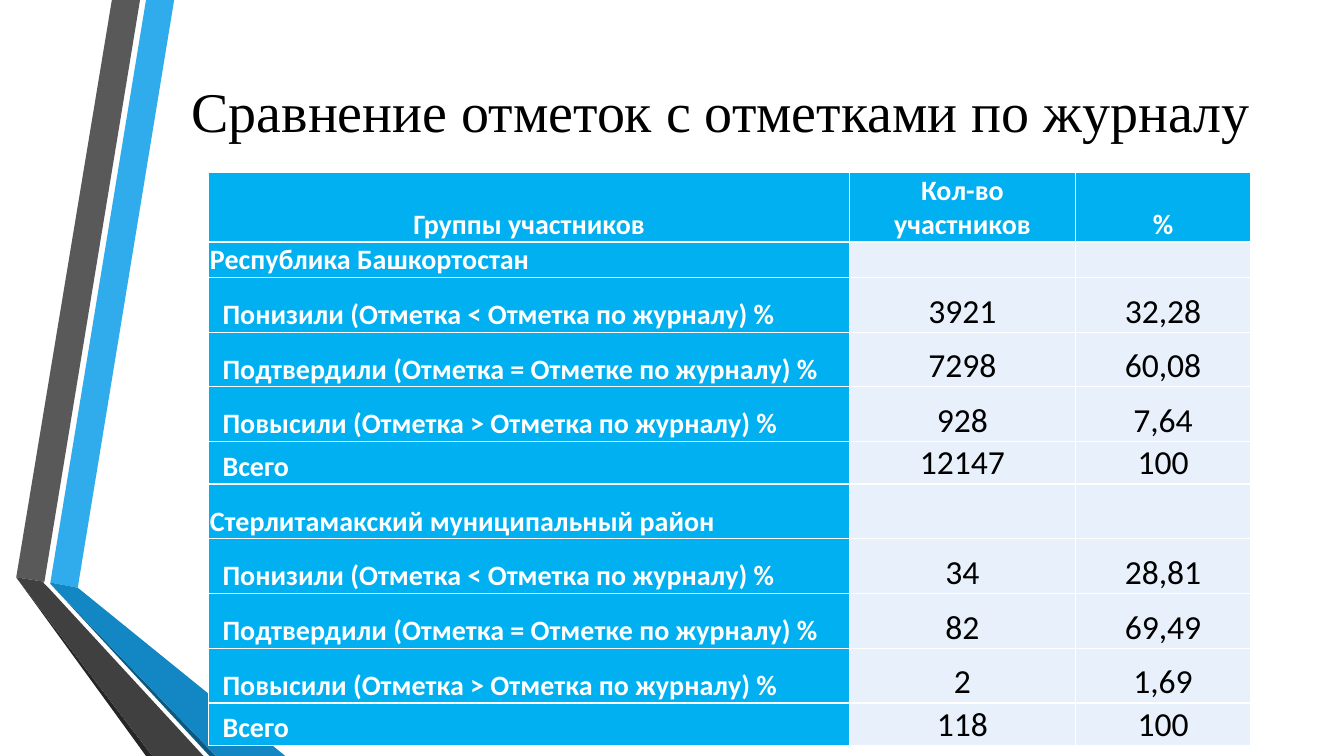
from collections import namedtuple
from dataclasses import dataclass

from lxml import etree
from pptx import Presentation
from pptx import util as u
from pptx.dml import color
from pptx.enum import text
from pptx.oxml import ns

Box = namedtuple("Box", "left top width height")


@dataclass(frozen=True)
class Theme:
    title_font: str = "Times New Roman"
    table_font: str = "Calibri"
    title_size: int = 40
    label_size: int = 20
    value_size: int = 24
    dark: str = "000000"
    light: str = "FFFFFF"
    label_fill: str = "00B0F0"
    value_fill: str = "E8F1FB"
    border_width: int = 1


THEME = Theme()

# Ribbon outlines in cm, from back to front
RIBBONS = [
    ("30ACEC", [(1.27, 14.68), (1.96, 14.81), (4.39, 0), (3.68, 0)]),
    ("595959", [(3.53, 0), (2.82, 0), (0.41, 14.55), (1.12, 14.66)]),
    ("262626", [(0.41, 14.55), (3.68, 19.05), (3.84, 19.05)]),
    ("0C5A82", [(1.27, 14.71), (5.28, 19.05), (5.44, 19.05)]),
    ("1287C3", [(1.27, 14.71), (5.44, 19.05), (7.19, 19.05), (1.96, 14.81), (1.27, 14.68)]),
    ("404040", [(5.13, 19.05), (1.22, 14.81), (1.09, 14.68), (1.12, 14.66),
                (0.41, 14.55), (3.84, 19.05)]),
]

TITLE = "Сравнение отметок с отметками по журналу"
HEADINGS = ["Группы участников", "Кол-во участников", "%"]
OUTCOMES = [
    "Понизили (Отметка < Отметка по журналу) %",
    "Подтвердили (Отметка = Отметке по журналу) %",
    "Повысили (Отметка > Отметка по журналу) %",
    "Всего",
]
REGIONS = {
    "Республика Башкортостан":
        [("3921", "32,28"), ("7298", "60,08"), ("928", "7,64"), ("12147", "100")],
    "Стерлитамакский муниципальный район":
        [("34", "28,81"), ("82", "69,49"), ("2", "1,69"), ("118", "100")],
}

COLUMN_WIDTHS = [16.15, 5.69, 4.42]
OUTCOME_HEIGHTS = [1.38, 1.38, 1.38, 1.07]
ROW_HEIGHTS = [1.76, 0.89, *OUTCOME_HEIGHTS, 1.38, *OUTCOME_HEIGHTS]
CELL_MARGIN = 0.03
OUTCOME_INDENT = 0.35


def rgb(code):
    return color.RGBColor.from_string(code)


def apply_format(target, values):
    for name, value in values.items():
        setattr(target, name, value)


def write(paragraph, wording, ink, align, font):
    paragraph.alignment = align
    run = paragraph.add_run()
    run.text = wording
    apply_format(run.font, font)
    run.font.color.rgb = rgb(ink)


def add_ribbons(slide, box):
    for fill, outline in RIBBONS:
        points = [(u.Cm(box.left + x), u.Cm(box.top + y)) for x, y in outline]
        builder = slide.shapes.build_freeform(*points[0])
        builder.add_line_segments(points[1:], close=True)
        ribbon = builder.convert_to_shape()
        ribbon.shadow.inherit = False
        ribbon.fill.solid()
        ribbon.fill.fore_color.rgb = rgb(fill)
        ribbon.line.fill.background()


def add_title(slide, box):
    frame = slide.shapes.add_textbox(*map(u.Cm, box)).text_frame
    apply_format(frame, {"word_wrap": True, "vertical_anchor": text.MSO_ANCHOR.MIDDLE})
    write(frame.paragraphs[0], TITLE, THEME.dark, text.PP_ALIGN.CENTER,
          {"name": THEME.title_font, "size": u.Pt(THEME.title_size)})


def add_borders(cell):
    properties = cell._tc.get_or_add_tcPr()
    for side in ("a:lnL", "a:lnR", "a:lnT", "a:lnB"):
        line = etree.SubElement(properties, ns.qn(side), w=str(u.Pt(THEME.border_width)))
        solid = etree.SubElement(line, ns.qn("a:solidFill"))
        etree.SubElement(solid, ns.qn("a:srgbClr"), val=THEME.light)


def fill_cell(cell, wording, is_label, align, indent):
    add_borders(cell)
    cell.fill.solid()
    cell.fill.fore_color.rgb = rgb(THEME.label_fill if is_label else THEME.value_fill)
    apply_format(cell, {
        "vertical_anchor": text.MSO_ANCHOR.BOTTOM,
        "margin_left": u.Cm(indent),
        "margin_right": u.Cm(CELL_MARGIN),
        "margin_top": u.Cm(CELL_MARGIN),
        "margin_bottom": 0,
    })
    if wording:
        size = THEME.label_size if is_label else THEME.value_size
        write(cell.text_frame.paragraphs[0], wording,
              THEME.light if is_label else THEME.dark, align,
              {"name": THEME.table_font, "size": u.Pt(size), "bold": is_label})


def table_rows():
    """Yield each row's wording and the left margin of its first cell."""
    yield HEADINGS, CELL_MARGIN
    for region, results in REGIONS.items():
        yield [region, "", ""], CELL_MARGIN
        for outcome, values in zip(OUTCOMES, results):
            yield [outcome, *values], OUTCOME_INDENT


def add_results_table(slide, box):
    results = slide.shapes.add_table(
        len(ROW_HEIGHTS), len(COLUMN_WIDTHS), *map(u.Cm, box)).table
    for column, width in zip(results.columns, COLUMN_WIDTHS):
        column.width = u.Cm(width)
    for row, height in zip(results.rows, ROW_HEIGHTS):
        row.height = u.Cm(height)
    for r, (wordings, indent) in enumerate(table_rows()):
        for c, wording in enumerate(wordings):
            is_label = r == 0 or c == 0
            is_centred = r == 0 or c > 0
            align = text.PP_ALIGN.CENTER if is_centred else text.PP_ALIGN.LEFT
            fill_cell(results.cell(r, c), wording, is_label, align,
                      CELL_MARGIN if is_centred else indent)


def main():
    deck = Presentation()
    apply_format(deck, {"slide_width": u.Cm(33.87), "slide_height": u.Cm(19.05)})
    slide = deck.slides.add_slide(deck.slide_layouts[6])
    add_ribbons(slide, Box(0, 0, 7.19, 19.05))
    add_title(slide, Box(4.24, 0.33, 27.84, 4.88))
    add_results_table(slide, Box(5.26, 4.34, sum(COLUMN_WIDTHS), sum(ROW_HEIGHTS)))
    deck.save("out.pptx")


if __name__ == "__main__":
    main()
